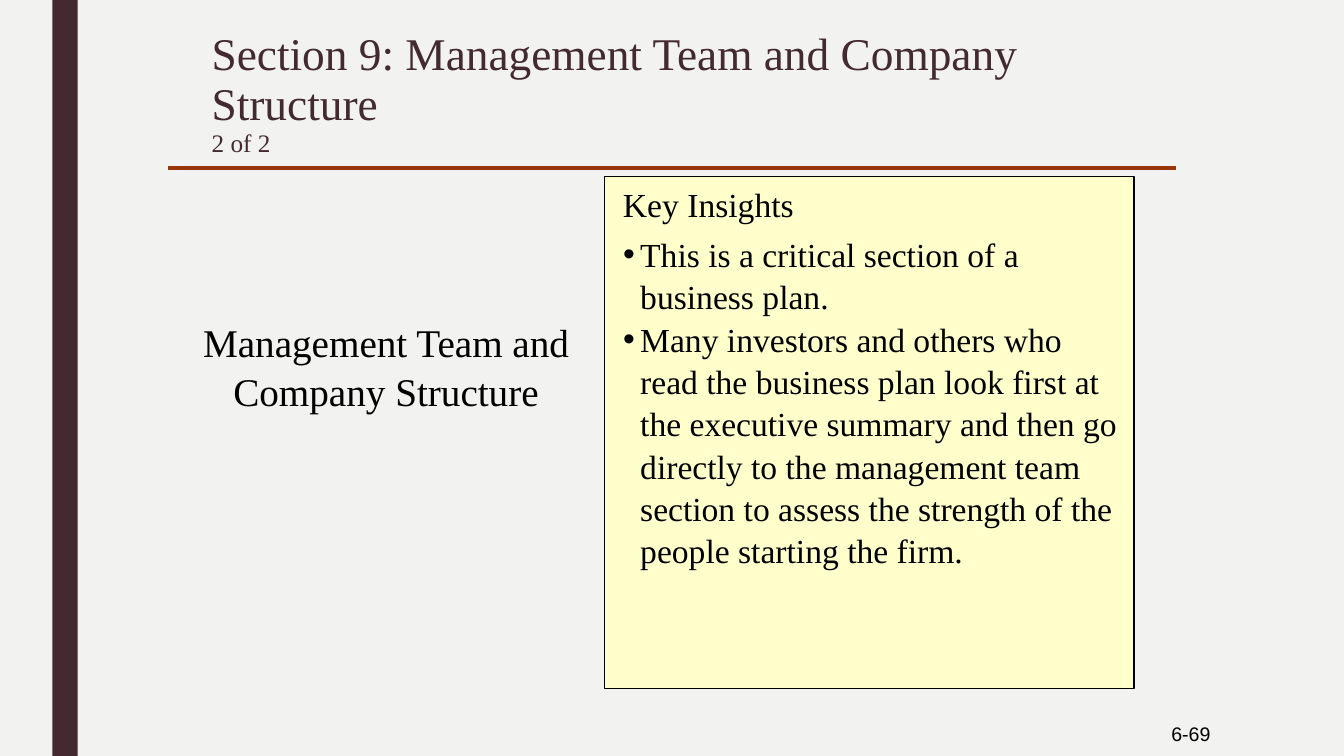
from dataclasses import dataclass

from lxml import etree
from pptx import Presentation
from pptx import util as u
from pptx.dml.color import RGBColor
from pptx.enum import shapes, text
from pptx.oxml.ns import qn


@dataclass(frozen=True)
class Theme:
    paper: str = "F2F2F0"
    plum: str = "432A30"
    rust: str = "993300"
    cream: str = "FFFFCC"
    ink: str = "000000"
    serif: str = "Times New Roman"
    sans: str = "Arial"
    title: float = 32.4
    topic: float = 28
    body: float = 24
    counter: float = 18
    number: float = 14
    title_spacing: float = 0.92
    text_spacing: float = 1.05


class Deck:
    def __init__(self, theme):
        self.theme = theme
        self.prs = Presentation()
        self.prs.slide_width, self.prs.slide_height = u.Cm(33.87), u.Cm(19.05)
        self.s = self.prs.slides.add_slide(self.prs.slide_layouts[1])
        fill = self.s.background.fill
        fill.solid()
        fill.fore_color.rgb = RGBColor.from_string(theme.paper)

    def place(self, sp, box):
        sp.left, sp.top, sp.width, sp.height = map(u.Cm, box)

    def style(self, p, size, color, font=None, spacing=None, align=text.PP_ALIGN.LEFT):
        p.alignment = align
        p.line_spacing = spacing or self.theme.text_spacing
        p.space_before = p.space_after = u.Pt(0)
        for r in p.runs:
            r.font.size = u.Pt(size)
            r.font.name = font or self.theme.serif
            r.font.color.rgb = RGBColor.from_string(color)

    def frame(self, sp, anchor=text.MSO_ANCHOR.TOP):
        tf = sp.text_frame
        tf.word_wrap = True
        tf.auto_size = text.MSO_AUTO_SIZE.NONE
        tf.vertical_anchor = anchor
        return tf

    def title(self, heading, counter, box):
        t = self.theme
        sp = self.s.shapes.title
        self.place(sp, box)
        p = self.frame(sp).paragraphs[0]
        p.text = f"{heading}\v{counter}"
        self.style(p, t.title, t.plum, spacing=t.title_spacing)
        p.runs[-1].font.size = u.Pt(t.counter)

    def bullets(self, items, box, hang):
        t = self.theme
        sp = self.s.placeholders[1]
        self.place(sp, box)
        tf = self.frame(sp)
        tf.text = "\n".join(items)
        for p in tf.paragraphs:
            self.style(p, t.body, t.ink)
            pPr = p._p.get_or_add_pPr()
            pPr.set("marL", str(u.Cm(hang)))
            pPr.set("indent", str(-u.Cm(hang)))
            etree.SubElement(pPr, qn("a:buChar")).set("char", "•")
        tree = self.s.shapes._spTree
        tree.remove(sp._element)
        tree.append(sp._element)

    def rect(self, box, fill, line=None):
        sp = self.s.shapes.add_shape(shapes.MSO_SHAPE.RECTANGLE, *map(u.Cm, box))
        sp.shadow.inherit = False
        sp.fill.solid()
        sp.fill.fore_color.rgb = RGBColor.from_string(fill)
        if line:
            sp.line.color.rgb = RGBColor.from_string(line)
            sp.line.width = u.Pt(0.75)
        else:
            sp.line.fill.background()

    def rule(self, x1, x2, y, color, width):
        ends = map(u.Cm, (x1, y, x2, y))
        sp = self.s.shapes.add_connector(shapes.MSO_CONNECTOR.STRAIGHT, *ends)
        sp.line.color.rgb = RGBColor.from_string(color)
        sp.line.width = u.Pt(width)
        etree.SubElement(sp._element.spPr, qn("a:effectLst"))

    def label(self, words, box, size, anchor=text.MSO_ANCHOR.TOP, **style):
        sp = self.s.shapes.add_textbox(*map(u.Cm, box))
        tf = self.frame(sp, anchor)
        tf.text = words
        self.style(tf.paragraphs[0], size, self.theme.ink, **style)


def main():
    t = Theme()
    d = Deck(t)
    d.rect((1.32, 0, 0.64, 19.05), t.plum)
    d.title("Section 9: Management Team and Company Structure", "2 of 2",
            (5.08, 0.64, 23.93, 3.18))
    d.rule(4.23, 29.63, 4.23, t.rust, 3)
    d.label("Management Team and Company Structure", (4.23, 7.83, 11, 2.64),
            t.topic, align=text.PP_ALIGN.CENTER)
    d.rect((15.24, 4.45, 13.34, 12.9), t.cream, t.ink)
    d.label("Key Insights", (15.45, 4.45, 12.9, 1.28), t.body)
    d.bullets(
        ["This is a critical section of a business plan.",
         "Many investors and others who read the business plan look first at "
         "the executive summary and then go directly to the management team "
         "section to assess the strength of the people starting the firm."],
        (15.45, 5.72, 13.06, 8.46), 0.43)
    d.label("6-69", (26.31, 17.93, 4.45, 1.12), t.number, text.MSO_ANCHOR.MIDDLE,
            font=t.sans, spacing=1, align=text.PP_ALIGN.RIGHT)
    d.prs.save("out.pptx")


if __name__ == "__main__":
    main()
